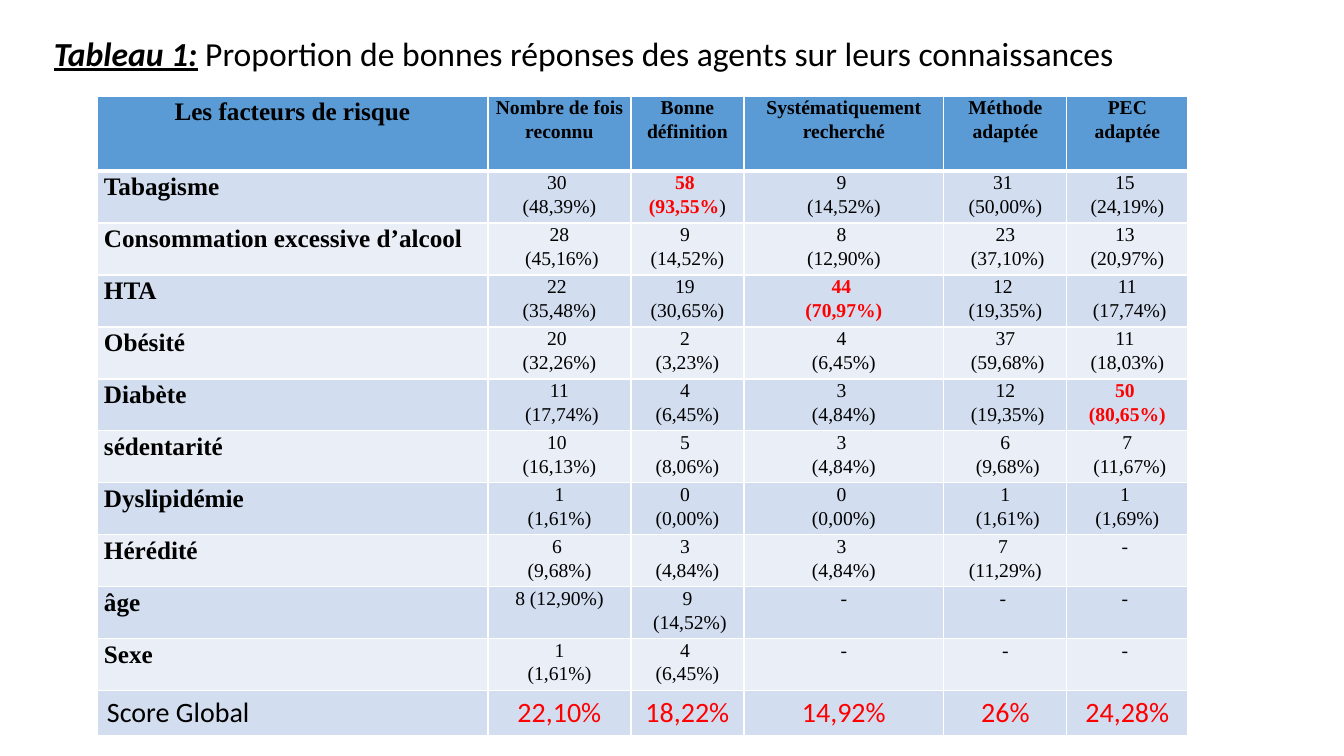
from lxml import etree
from pptx import Presentation
from pptx.dml.color import RGBColor
from pptx.enum.text import MSO_ANCHOR, PP_ALIGN
from pptx.oxml.ns import qn
from pptx.util import Pt

LEFT, CENTER = PP_ALIGN.LEFT, PP_ALIGN.CENTER
MIDDLE = MSO_ANCHOR.MIDDLE
PX = 914400 / 100.8

THEME = {
    "text": "000000", "highlight": "FF0000", "border": "FFFFFF",
    "header": "5B9BD5", "bands": ("EAEFF7", "D2DEEF"),
    "sans": "Calibri", "serif": "Times New Roman",
    "title": 24, "label": 18, "value": 14, "score": 20,
}

COLUMN_WIDTHS = [391, 143, 113, 200, 123, 121]
ROW_HEIGHTS = [75] + [52] * 10 + [45]

# "|" starts a new paragraph; text between asterisks is highlighted.
ROWS = [
    ["Les facteurs de risque", "Nombre de fois reconnu", "Bonne définition",
     "Systématiquement|recherché", "Méthode adaptée", "PEC adaptée"],
    ["Tabagisme", "30 |(48,39%)", "*58 *|*(93,55%*)", "9 |(14,52%)", "31 |(50,00%)", "15 |(24,19%)"],
    ["Consommation excessive d’alcool", "28| (45,16%)", "9 |(14,52%)", "8 |(12,90%)",
     "23| (37,10%)", "13 |(20,97%)"],
    ["HTA", "22 |(35,48%)", "19 |(30,65%)", "*44 *|*(70,97%)*", "12 |(19,35%)", "11| (17,74%)"],
    ["Obésité", "20 |(32,26%)", "2 |(3,23%)", "4 |(6,45%)", "37| (59,68%)", "11 |(18,03%)"],
    ["Diabète", "11| (17,74%)", "4 |(6,45%)", "3 |(4,84%)", "12| (19,35%)", "*50 *|*(80,65%)*"],
    ["sédentarité", "10 |(16,13%)", "5 |(8,06%)", "3 |(4,84%)", "6| (9,68%)", "7| (11,67%)"],
    ["Dyslipidémie", "1|(1,61%)", "0 |(0,00%)", "0 |(0,00%)", "1| (1,61%)", "1 |(1,69%)"],
    ["Hérédité", "6 |(9,68%)", "3 |(4,84%)", "3 |(4,84%)", "7 |(11,29%)", "- "],
    ["âge", "8 (12,90%)", "9| (14,52%)", "-", "- ", "- "],
    ["Sexe", "1|(1,61%)", "4 |(6,45%)", "-", "-", "- "],
    ["Score Global", "*22,10%*", "*18,22%*", "*14,92%*", "*26%*", "*24,28%*"],
]


def px(length):
    return round(length * PX)


def add_run(paragraph, text, color, **font_values):
    run = paragraph.add_run()
    run.text = text
    run.font.color.rgb = RGBColor.from_string(color)
    for name, value in font_values.items():
        setattr(run.font, name, value)


presentation = Presentation()
presentation.slide_width, presentation.slide_height = px(1344), px(756)
slide = presentation.slides.add_slide(presentation.slide_layouts[6])

title = slide.shapes.add_textbox(px(44), px(21), px(1247), px(69)).text_frame
title.word_wrap = True
title.vertical_anchor = MIDDLE
heading = title.paragraphs[0]
heading.line_spacing = 0.9
for text, emphasis in (
    ("Tableau 1:", True),
    (" Proportion de bonnes réponses des agents sur leurs connaissances", False),
):
    add_run(heading, text, THEME["text"], name=THEME["sans"], size=Pt(THEME["title"]),
            bold=emphasis, italic=emphasis, underline=emphasis)

table = slide.shapes.add_table(
    len(ROWS), len(COLUMN_WIDTHS), px(97), px(96), px(sum(COLUMN_WIDTHS)), px(sum(ROW_HEIGHTS))
).table
table.horz_banding = False
for column, width in zip(table.columns, COLUMN_WIDTHS):
    column.width = px(width)

for row_index, (texts, height) in enumerate(zip(ROWS, ROW_HEIGHTS)):
    table.rows[row_index].height = px(height)
    is_header = row_index == 0
    is_score = row_index == len(ROWS) - 1
    fill = THEME["header"] if is_header else THEME["bands"][row_index % 2]
    margin_x, margin_y = (10, 5) if is_score else (7, 0)
    border_widths = {"L": 1, "R": 1, "T": 3 if row_index == 1 else 1, "B": 3 if is_header else 1}

    for column_index, text in enumerate(texts):
        cell = table.cell(row_index, column_index)
        is_label = column_index == 0
        for name, value in {
            "margin_left": px(margin_x), "margin_right": px(margin_x),
            "margin_top": px(margin_y), "margin_bottom": px(margin_y),
        }.items():
            setattr(cell, name, value)

        cell_properties = cell._tc.get_or_add_tcPr()
        for side, width in border_widths.items():
            line = etree.SubElement(cell_properties, qn(f"a:ln{side}"), w=str(Pt(width)))
            line_fill = etree.SubElement(line, qn("a:solidFill"))
            etree.SubElement(line_fill, qn("a:srgbClr"), val=THEME["border"])
        cell.fill.solid()
        cell.fill.fore_color.rgb = RGBColor.from_string(fill)

        size = THEME["score" if is_score else "label" if is_label else "value"]
        for line_index, line_text in enumerate(text.split("|")):
            frame = cell.text_frame
            paragraph = frame.add_paragraph() if line_index else frame.paragraphs[0]
            paragraph.alignment = LEFT if is_label and not is_header else CENTER
            paragraph.line_spacing = 1.0 if is_score else 1.07
            for part_index, part in enumerate(line_text.split("*")):
                if not part:
                    continue
                highlighted = part_index % 2 == 1
                add_run(paragraph, part, THEME["highlight" if highlighted else "text"],
                        name=THEME["sans" if is_score else "serif"], size=Pt(size),
                        bold=not is_score and (is_header or is_label or highlighted))

presentation.save("out.pptx")
